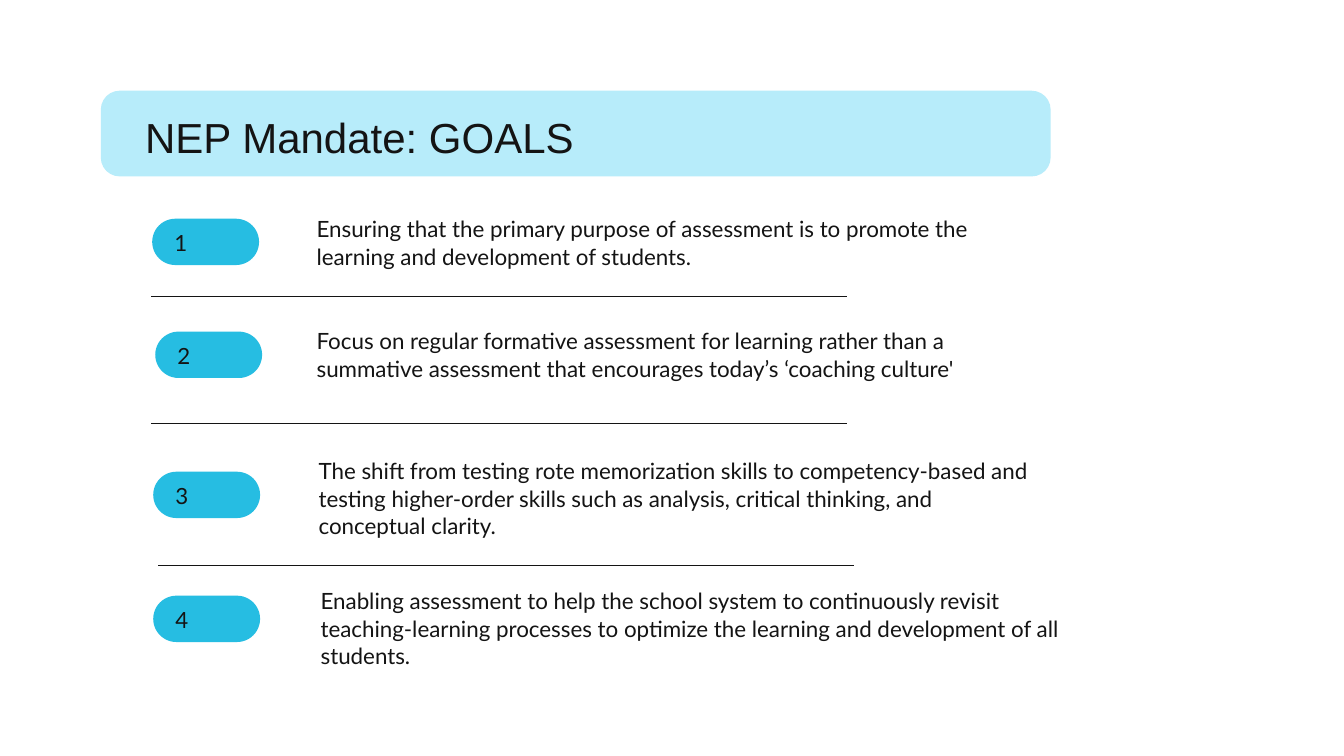
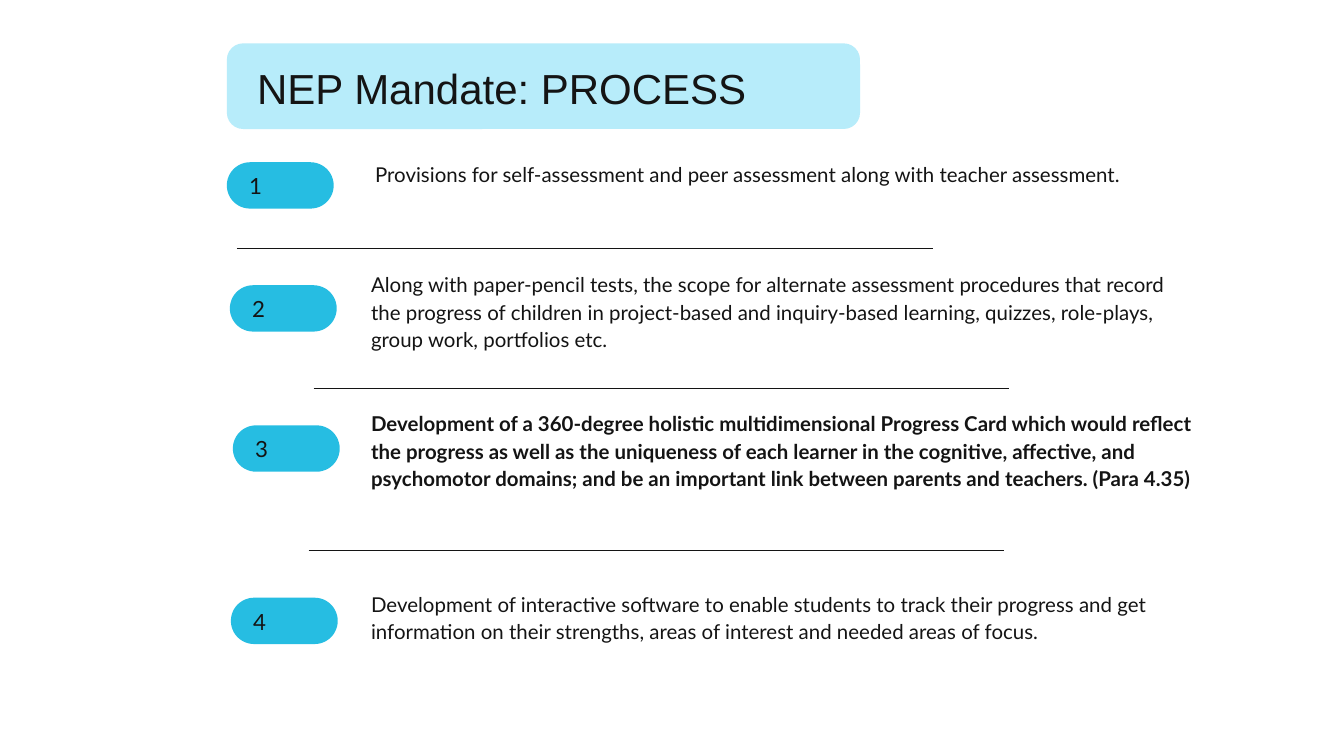
from dataclasses import dataclass

import pptx
import pptx.dml.color
import pptx.enum.shapes
import pptx.enum.text
import pptx.oxml
import pptx.oxml.ns
import pptx.shapes.autoshape
import pptx.slide
import pptx.util

Inches = pptx.util.Inches
Pt = pptx.util.Pt
RGB = pptx.dml.color.RGBColor
Slide = pptx.slide.Slide


# Shared look
@dataclass(frozen=True)
class Theme:
    ink: RGB = RGB(0x14, 0x14, 0x14)
    badge_fill: RGB = RGB(0x26, 0xBD, 0xE2)
    band_fill: RGB = RGB(0xB7, 0xEC, 0xFA)
    title_font: str = "Arial"
    body_font: str = "Lato"
    title_size: float = 30
    title_leading: float = 39
    number_size: float = 15.9
    number_leading: float = 21.4
    body_leading: float = 19.7
    rule_weight: float = 0.72
    rule_length: float = 6.9
    badge_width: float = 1.06
    badge_height: float = 0.46
    band_height: float = 0.85


THEME = Theme()


# Content model: positions are in inches
@dataclass(frozen=True)
class Box:
    left: float
    top: float
    width: float
    height: float


@dataclass(frozen=True)
class TextStyle:
    font: str
    size: float
    leading: float
    bold: bool = False


@dataclass(frozen=True)
class Point:
    badge_left: float
    badge_top: float
    body: Box
    wording: str
    bold: bool = False


@dataclass(frozen=True)
class Rule:
    left: float
    top: float


@dataclass(frozen=True)
class Page:
    title: str
    band_left: float
    band_top: float
    band_width: float
    band_rounding: float
    title_box: Box
    body_size: float
    points: tuple[Point, ...]
    rules: tuple[Rule, ...]


PAGES = (
    Page(
        "NEP Mandate: GOALS", 1, 0.9, 9.42, 0.22, Box(1.44, 1.06, 8.53, 0.51), 16,
        (
            Point(1.51, 2.17, Box(3.14, 2.13, 7.07, 0.54),
                  "Ensuring that the primary purpose of assessment is to promote "
                  "the learning and development of students."),
            Point(1.54, 3.29, Box(3.14, 3.24, 7.05, 0.82),
                  "Focus on regular formative assessment for learning rather than "
                  "a summative assessment that encourages today’s ‘coaching culture'"),
            Point(1.52, 4.68, Box(3.16, 4.53, 7.05, 0.82),
                  "The shift from testing rote memorization skills to "
                  "competency-based and testing higher-order skills such as "
                  "analysis, critical thinking, and conceptual clarity."),
            Point(1.52, 5.91, Box(3.18, 5.82, 7.38, 0.81),
                  "Enabling assessment to help the school system to continuously "
                  "revisit teaching-learning processes to optimize the learning "
                  "and development of all students."),
        ),
        (Rule(1.5, 2.94), Rule(1.5, 4.2), Rule(1.57, 5.61)),
    ),
    Page(
        "NEP Mandate: PROCESS", 2.25, 0.43, 6.28, 0.19, Box(2.55, 0.58, 5.68, 0.51), 14.6,
        (
            Point(2.25, 1.61, Box(3.72, 1.58, 7.44, 0.54),
                  "Provisions for self-assessment and peer assessment along with "
                  "teacher assessment."),
            Point(2.28, 2.83, Box(3.68, 2.67, 8.08, 0.81),
                  "Along with paper-pencil tests, the scope for alternate "
                  "assessment procedures that record the progress of children in "
                  "project-based and inquiry-based learning, quizzes, role-plays, "
                  "group work, portfolios etc."),
            Point(2.31, 4.22, Box(3.68, 4.05, 8.48, 1.09),
                  "Development of a 360-degree holistic multidimensional Progress "
                  "Card which would reflect the progress as well as the uniqueness "
                  "of each learner in the cognitive, affective, and psychomotor "
                  "domains; and be an important link between parents and teachers. "
                  "(Para 4.35)", bold=True),
            Point(2.29, 5.93, Box(3.68, 5.84, 8.08, 0.81),
                  "Development of interactive software to enable students to track "
                  "their progress and get information on their strengths, areas of "
                  "interest and needed areas of focus."),
        ),
        (Rule(2.35, 2.47), Rule(3.11, 3.85), Rule(3.06, 5.46)),
    ),
)


# Drawing helpers
def draw_rounded(slide: Slide, box: Box, fill: RGB, rounding: float) -> None:
    panel = slide.shapes.add_shape(
        pptx.enum.shapes.MSO_SHAPE.ROUNDED_RECTANGLE,
        Inches(box.left), Inches(box.top), Inches(box.width), Inches(box.height))
    panel.adjustments[0] = rounding
    panel.shadow.inherit = False
    panel.fill.solid()
    panel.fill.fore_color.rgb = fill
    panel.line.fill.background()


def draw_text(slide: Slide, box: Box, wording: str, style: TextStyle) -> None:
    frame = slide.shapes.add_textbox(
        Inches(box.left), Inches(box.top), Inches(box.width), Inches(box.height)).text_frame
    frame.margin_left = frame.margin_right = frame.margin_top = frame.margin_bottom = 0
    frame.word_wrap = True
    frame.auto_size = pptx.enum.text.MSO_AUTO_SIZE.SHAPE_TO_FIT_TEXT
    frame.text = wording
    paragraph = frame.paragraphs[0]
    paragraph.line_spacing = Pt(style.leading)
    font = paragraph.runs[0].font
    font.name = style.font
    font.size = Pt(style.size)
    font.bold = style.bold
    font.color.rgb = THEME.ink


def draw_rule(slide: Slide, rule: Rule) -> None:
    divider = slide.shapes.add_connector(
        pptx.enum.shapes.MSO_CONNECTOR.STRAIGHT,
        Inches(rule.left), Inches(rule.top),
        Inches(rule.left + THEME.rule_length), Inches(rule.top))
    divider.line.color.rgb = THEME.ink
    divider.line.width = Pt(THEME.rule_weight)
    properties = divider._element.spPr
    properties.append(pptx.oxml.parse_xml(
        f"<a:effectLst {pptx.oxml.ns.nsdecls('a')}/>"))


def draw_point(slide: Slide, number: int, point: Point, body_size: float) -> None:
    badge = Box(point.badge_left, point.badge_top, THEME.badge_width, THEME.badge_height)
    draw_rounded(slide, badge, THEME.badge_fill, 0.5)
    draw_text(slide, Box(badge.left + 0.22, badge.top + 0.07, 0.69, 0.27), str(number),
              TextStyle(THEME.body_font, THEME.number_size, THEME.number_leading))
    draw_text(slide, point.body, point.wording,
              TextStyle(THEME.body_font, body_size, THEME.body_leading, point.bold))


def draw_page(slide: Slide, page: Page) -> None:
    # Title band
    band = Box(page.band_left, page.band_top, page.band_width, THEME.band_height)
    draw_rounded(slide, band, THEME.band_fill, page.band_rounding)
    draw_text(slide, page.title_box, page.title,
              TextStyle(THEME.title_font, THEME.title_size, THEME.title_leading))
    # Numbered points and the rules between them
    for number, point in enumerate(page.points, start=1):
        draw_point(slide, number, point, page.body_size)
    for rule in page.rules:
        draw_rule(slide, rule)


def main() -> None:
    deck = pptx.Presentation()
    deck.slide_width = Inches(13.33)
    deck.slide_height = Inches(7.5)
    blank = deck.slide_layouts[6]
    for page in PAGES:
        draw_page(deck.slides.add_slide(blank), page)
    deck.save("out.pptx")


if __name__ == "__main__":
    main()
